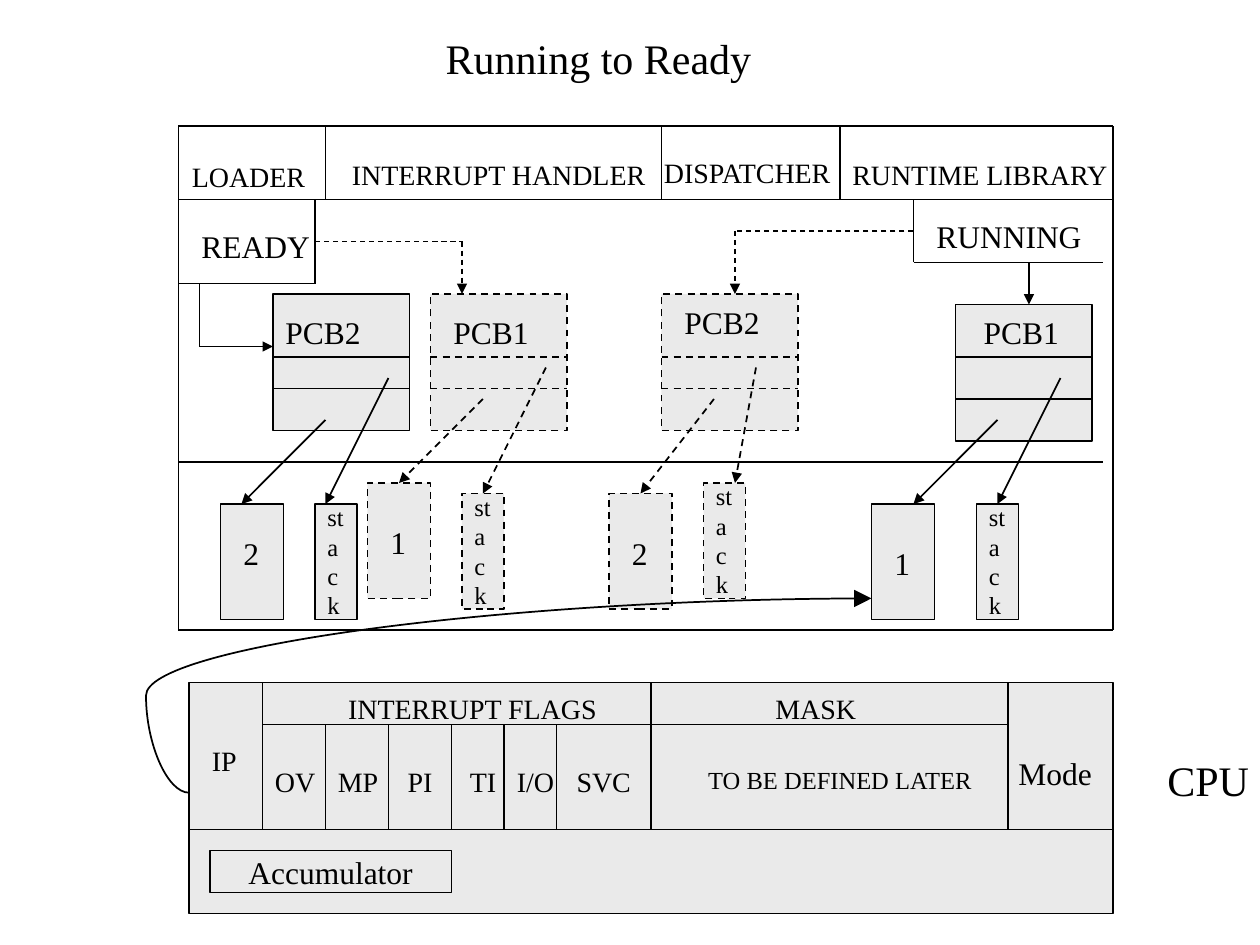
from lxml import etree
from pptx import Presentation
from pptx.dml.color import RGBColor
from pptx.enum import dml, shapes, text
from pptx.oxml import ns
from pptx.util import Pt

BLACK = RGBColor(0x00, 0x00, 0x00)
GREY = RGBColor(0xEA, 0xEA, 0xEA)
FONT = "Times New Roman"
CENTER = text.PP_ALIGN.CENTER
THIN, MEDIUM = 0.75, 1


def write(tf, words, size=18, align=None):
    p = tf.paragraphs[0]
    p.alignment = align
    p.space_before = Pt(0)
    r = p.add_run()
    r.text = words
    r.font.name = FONT
    r.font.size = Pt(size)
    r.font.color.rgb = BLACK


class Diagram:
    """Holds the line, fill and text style and the current slide."""

    def __init__(self, s):
        self.s = s

    def outline(self, line, width, dashed):
        line.color.rgb = BLACK
        line.width = Pt(width)
        if dashed:
            line.dash_style = dml.MSO_LINE.DASH

    def box(self, x, y, w, h, width=MEDIUM, dashed=False):
        sp = self.s.shapes.add_shape(shapes.MSO_SHAPE.RECTANGLE, Pt(x), Pt(y), Pt(w), Pt(h))
        sp.shadow.inherit = False
        sp.fill.solid()
        sp.fill.fore_color.rgb = GREY
        self.outline(sp.line, width, dashed)
        return sp

    def line(self, x1, y1, x2, y2, width=THIN, dashed=False, head=None,
             kind=shapes.MSO_CONNECTOR.STRAIGHT):
        c = self.s.shapes.add_connector(kind, Pt(x1), Pt(y1), Pt(x2), Pt(y2))
        self.outline(c.line, width, dashed)
        if head:
            etree.SubElement(c.line._get_or_add_ln(), ns.qn("a:tailEnd"),
                             type="triangle", w=head, len=head)
        etree.SubElement(c._element.spPr, ns.qn("a:effectLst"))
        return c

    def arrow(self, x1, y1, x2, y2, width=MEDIUM, dashed=False, to=None):
        c = self.line(x1, y1, x2, y2, width, dashed, head="med")
        if to is not None and to.left + to.width // 2 == Pt(x2):
            c.end_connect(to, 0)

    def curve(self, x1, y1, x2, y2, bend):
        c = self.line(x1, y1, x2, y2, MEDIUM, head="lg", kind=shapes.MSO_CONNECTOR.CURVE)
        guides = c._element.spPr.find(ns.qn("a:prstGeom")).get_or_add_avLst()
        etree.SubElement(guides, ns.qn("a:gd"), name="adj1", fmla=f"val {bend}")

    def label(self, words, x, y, w, size=18, align=None):
        sp = self.s.shapes.add_textbox(Pt(x), Pt(y), Pt(w), Pt(round(size * 1.15 + 7.2, 2)))
        tf = sp.text_frame
        tf.word_wrap = True
        tf.auto_size = text.MSO_AUTO_SIZE.SHAPE_TO_FIT_TEXT
        tf.margin_top, tf.margin_bottom = Pt(5), Pt(2.2)
        write(tf, words, size, align)

    def pcb(self, name, x, y, name_at, divider, dashed):
        self.box(x, y, 78, 78, dashed=dashed)
        for row in (divider, 54):
            self.line(x, y + row, x + 78, y + row, MEDIUM, dashed)
        self.label(name, x + name_at[0], y + name_at[1], 72)

    def memory(self, number, code, stack, number_dy, links, dashed):
        targets = [self.box(*code, 36, 66, dashed=dashed), self.box(*stack, 24, 66, dashed=dashed)]
        self.label(number, code[0] + 6, code[1] + number_dy, 24)
        self.label("stack", stack[0], stack[1] - 6, 24, size=14)
        for link, target in zip(links, targets):
            self.arrow(*link, dashed=dashed, to=target)


def main():
    prs = Presentation()
    prs.slide_width, prs.slide_height = Pt(720), Pt(540)
    d = Diagram(prs.slides.add_slide(prs.slide_layouts[6]))

    d.label("Running to Ready", 213, 13.5, 258, size=24, align=CENTER)

    # Memory frame and its system routines
    left, right, top, header, bottom = 102, 636, 72, 114, 360
    for y in (top, header, bottom):
        d.line(left, y, right, y)
    d.line(left, 264, 630, 264)
    for x in (left, right):
        d.line(x, top, x, bottom)
    for x in (186, 378, 480):
        d.line(x, top, x, header)
    for words, x, y, w, align in (
            ("LOADER", 94, 86, 96, CENTER), ("INTERRUPT HANDLER", 177, 85, 216, CENTER),
            ("DISPATCHER", 364, 84, 126, CENTER), ("RUNTIME LIBRARY", 480, 85, 168, None)):
        d.label(words, x, y, w, size=16, align=align)

    # Ready and running queue heads
    d.line(left, 162, 180, 162)
    d.line(180, header, 180, 162)
    d.label("READY", 108, 125, 96)
    d.line(522, header, 522, 150)
    d.line(522, 150, 630, 150)
    d.label("RUNNING", 528, 119, 102)

    # Process control blocks
    for block in (("PCB2", 156, 168, (0, 6), 36, False), ("PCB1", 246, 168, (6, 6), 36, True),
                  ("PCB2", 378, 168, (6, 0), 36, True), ("PCB1", 546, 174, (9, 0), 30, False)):
        d.pcb(*block)

    # Code and stack of each process, with the pointers to them
    for process in (
            ("2", (126, 288), (180, 288), 12,
             ((186, 240, 138, 288), (222, 216, 186, 288)), False),
            ("1", (210, 276), (264, 282), 18,
             ((276, 228, 228, 276), (312, 210, 276, 282)), True),
            ("2", (348, 282), (402, 276), 18,
             ((408, 228, 366, 282), (432, 210, 420, 276)), True),
            ("1", (498, 288), (558, 288), 18,
             ((570, 240, 522, 288), (606, 216, 570, 288)), False)):
        d.memory(*process)

    # Queue pointers
    d.line(114, 162, 114, 198, MEDIUM)
    d.arrow(114, 198, 156, 198)
    d.arrow(588, 150, 588, 174)
    for x1, x2, y in ((180, 264, 138), (522, 420, 132)):
        d.line(x1, y, x2, y, dashed=True)
        d.arrow(x2, y, x2, 168, THIN, dashed=True)

    # CPU registers
    cpu_top, flags, base = 390, 414, 474
    d.box(108, cpu_top, 528, 132, THIN)
    d.line(108, base, 636, base)
    d.line(150, flags, 576, flags)
    for x in (150, 372, 576):
        d.line(x, cpu_top, x, base)
    for x in (186, 222, 258, 288, 318):
        d.line(x, flags, x, base)

    accumulator = d.box(120, 486, 138, 24, THIN)
    tf = accumulator.text_frame
    tf.word_wrap = False
    tf.vertical_anchor = text.MSO_ANCHOR.MIDDLE
    write(tf, "Accumulator", align=CENTER)

    for words, x, y, w, size, align in (
            ("IP", 114, 420, 30, 16, None), ("INTERRUPT FLAGS", 150, 390, 240, 16, CENTER),
            ("MASK", 436, 390, 120, 16, None), ("OV", 150, 432, 60, 16, None),
            ("MP", 186, 432, 60, 16, None), ("PI", 210, 432, 60, 16, CENTER),
            ("TI", 258, 432, 36, 16, CENTER), ("I/O", 282, 432, 48, 16, CENTER),
            ("SVC", 312, 432, 66, 16, CENTER),
            ("TO BE DEFINED LATER", 360, 432, 240, 14, CENTER),
            ("Mode", 570, 426, 66, 18, CENTER), ("CPU", 660, 426, 78, 24, None)):
        d.label(words, x, y, w, size, align)

    # Instruction pointer to the running code
    d.curve(108, 453, 498, 342, bend=-6300)

    prs.save("out.pptx")


if __name__ == "__main__":
    main()
